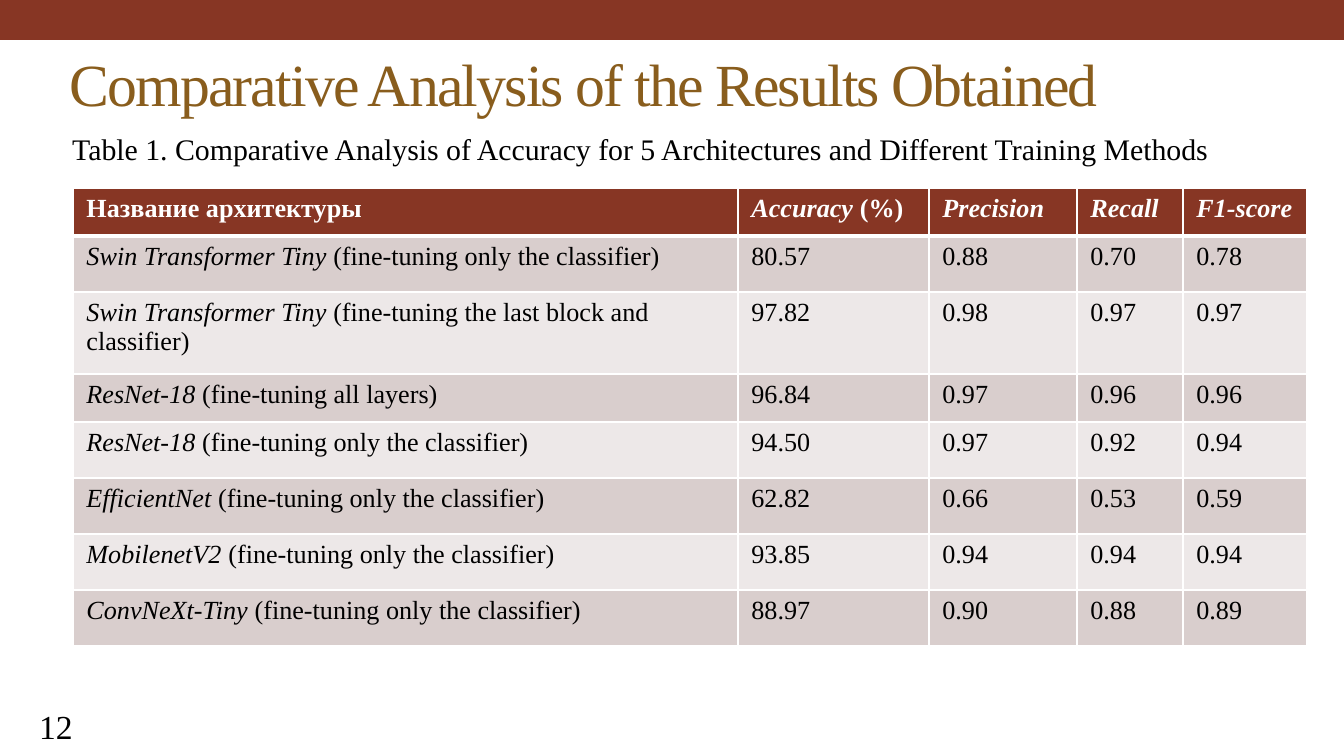
from dataclasses import dataclass

from lxml.etree import SubElement
from pptx import Presentation
from pptx.dml.color import RGBColor
from pptx.enum.shapes import MSO_SHAPE
from pptx.enum.text import MSO_ANCHOR, MSO_AUTO_SIZE, PP_ALIGN
from pptx.oxml.ns import qn
from pptx.util import Emu, Pt

WHITE = RGBColor(0xFF, 0xFF, 0xFF)
BLACK = RGBColor(0x00, 0x00, 0x00)
BRICK = RGBColor(0x87, 0x36, 0x24)
GOLD = RGBColor(0x89, 0x5D, 0x1D)
DARK = RGBColor(0xD9, 0xCE, 0xCD)
LIGHT = RGBColor(0xED, 0xE8, 0xE8)

SCALE = 914400 / 134.4
FACE = "Times New Roman"
TITLE = {"name": FACE, "size": Pt(32)}
NOTE = {"name": FACE, "size": Pt(16)}
PAGE = {"name": FACE, "size": Pt(18)}
HEAD = {"name": FACE, "size": Pt(14), "bold": True}
BODY = {"name": FACE, "size": Pt(14), "bold": False}

COLS = [665, 191, 148, 106, 124]
LABELS = [("", "Название архитектуры"), ("Accuracy ", "(%)"),
          ("Precision", ""), ("Recall", ""), ("F1-score", "")]
ONLY = "(fine-tuning only the classifier)"


@dataclass
class Box:
    left: int
    top: int
    width: int
    height: int

    def emu(self) -> list[Emu]:
        return [px(n) for n in (self.left, self.top, self.width, self.height)]


@dataclass
class Model:
    name: str
    method: str
    scores: str
    height: int = 56

    def cells(self) -> list[tuple[str, str]]:
        return [(self.name + " ", self.method)] + [("", s) for s in self.scores.split()]


MODELS = [
    Model("Swin Transformer Tiny", ONLY, "80.57 0.88 0.70 0.78"),
    Model("Swin Transformer Tiny", "(fine-tuning the last block and classifier)",
          "97.82 0.98 0.97 0.97", 82),
    Model("ResNet-18", "(fine-tuning all layers)", "96.84 0.97 0.96 0.96", 48),
    Model("ResNet-18", ONLY, "94.50 0.97 0.92 0.94"),
    Model("EfficientNet", ONLY, "62.82 0.66 0.53 0.59"),
    Model("MobilenetV2", ONLY, "93.85 0.94 0.94 0.94"),
    Model("ConvNeXt-Tiny", ONLY, "88.97 0.90 0.88 0.89"),
]


def px(n: int) -> Emu:
    return Emu(round(n * SCALE))


def add_run(para, text: str, style: dict, color: RGBColor, italic: bool = False):
    run = para.add_run()
    run.text = text
    for key, value in (style | {"italic": italic}).items():
        setattr(run.font, key, value)
    run.font.color.rgb = color
    return run


def add_text(slide, box: Box, text: str, style: dict) -> None:
    frame = slide.shapes.add_textbox(*box.emu()).text_frame
    frame.word_wrap = True
    add_run(frame.paragraphs[0], text, style, BLACK)


def add_bar(slide, box: Box) -> None:
    bar = slide.shapes.add_shape(MSO_SHAPE.RECTANGLE, *box.emu())
    bar.shadow.inherit = False
    bar.fill.solid()
    bar.fill.fore_color.rgb = BRICK
    bar.line.fill.background()


def set_title(slide, box: Box, text: str) -> None:
    title = slide.shapes.title
    for key, value in zip(("left", "top", "width", "height"), box.emu()):
        setattr(title, key, value)
    frame = title.text_frame
    form = {"vertical_anchor": MSO_ANCHOR.MIDDLE, "word_wrap": True,
            "auto_size": MSO_AUTO_SIZE.NONE}
    for key, value in form.items():
        setattr(frame, key, value)
    para = frame.paragraphs[0]
    para.alignment = PP_ALIGN.LEFT
    run = add_run(para, text, TITLE, GOLD)
    run.font._element.set("spc", "-100")


def set_edges(cell, base: int) -> None:
    props = cell._tc.get_or_add_tcPr()
    for side, width in {"L": 1, "R": 1, "T": 1, "B": base}.items():
        line = SubElement(props, qn(f"a:ln{side}"), w=str(Pt(width)))
        fill = SubElement(line, qn("a:solidFill"))
        SubElement(fill, qn("a:srgbClr"), val=str(WHITE))


def fill_row(row, cells: list, style: dict, ink: RGBColor, back: RGBColor,
             base: int = 1) -> None:
    for cell, (name, rest) in zip(row.cells, cells):
        set_edges(cell, base)
        cell.fill.solid()
        cell.fill.fore_color.rgb = back
        para = cell.text_frame.paragraphs[0]
        for text, italic in ((name, True), (rest, False)):
            if text:
                add_run(para, text, style, ink, italic)


def add_grid(slide, left: int, top: int) -> None:
    sizes = [48] + [model.height for model in MODELS]
    box = Box(left, top, sum(COLS), sum(sizes))
    table = slide.shapes.add_table(len(sizes), len(COLS), *box.emu()).table
    for col, width in zip(table.columns, COLS):
        col.width = px(width)
    for row, height in zip(table.rows, sizes):
        row.height = px(height)
    fill_row(table.rows[0], LABELS, HEAD, WHITE, BRICK, 3)
    for i, model in enumerate(MODELS):
        back = LIGHT if i % 2 else DARK
        fill_row(table.rows[i + 1], model.cells(), BODY, BLACK, back)


def main() -> None:
    deck = Presentation()
    deck.slide_width, deck.slide_height = px(1344), px(756)
    slide = deck.slides.add_slide(deck.slide_layouts[5])
    add_bar(slide, Box(0, 0, 1344, 40))
    set_title(slide, Box(56, 28, 1223, 109), "Comparative Analysis of the Results Obtained")
    add_text(slide, Box(26, 699, 95, 54), "12", PAGE)
    add_grid(slide, 73, 188)
    add_text(slide, Box(59, 124, 1247, 50),
             "Table 1. Comparative Analysis of Accuracy for 5 Architectures "
             "and Different Training Methods", NOTE)
    deck.save("out.pptx")


if __name__ == "__main__":
    main()
